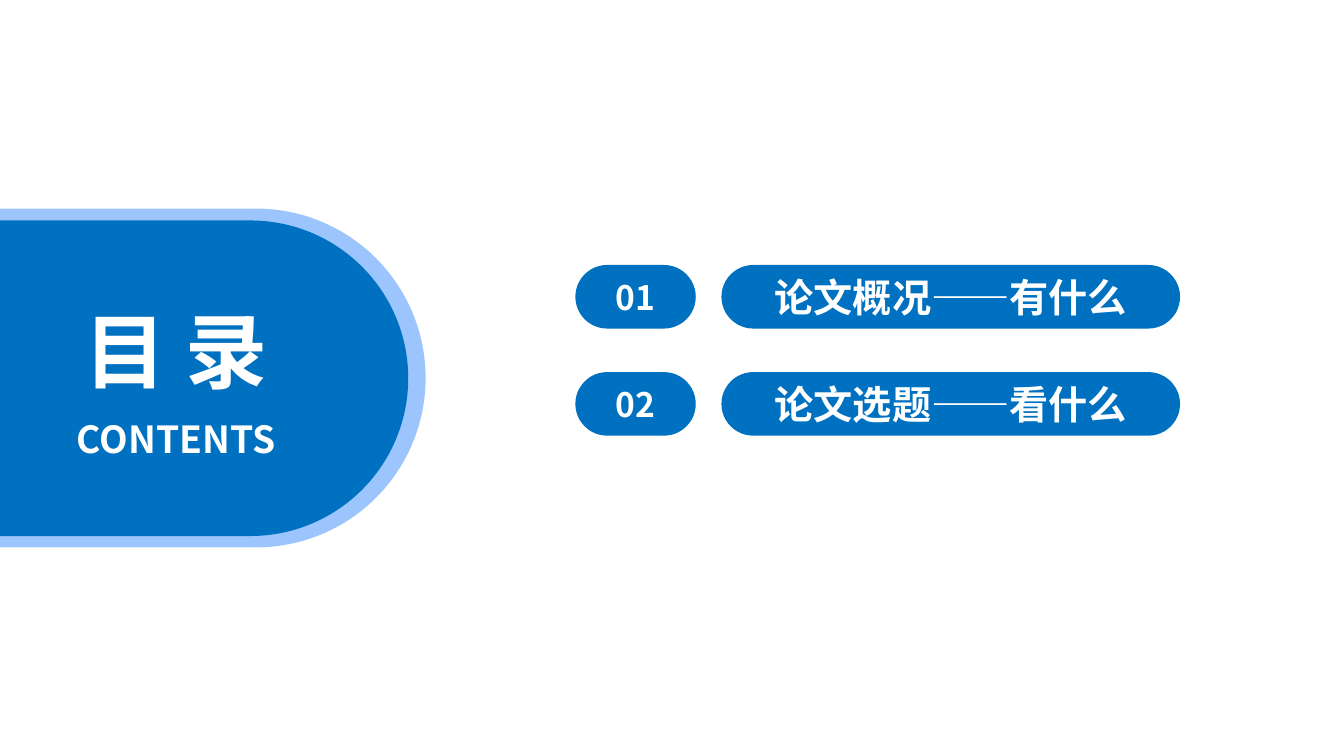
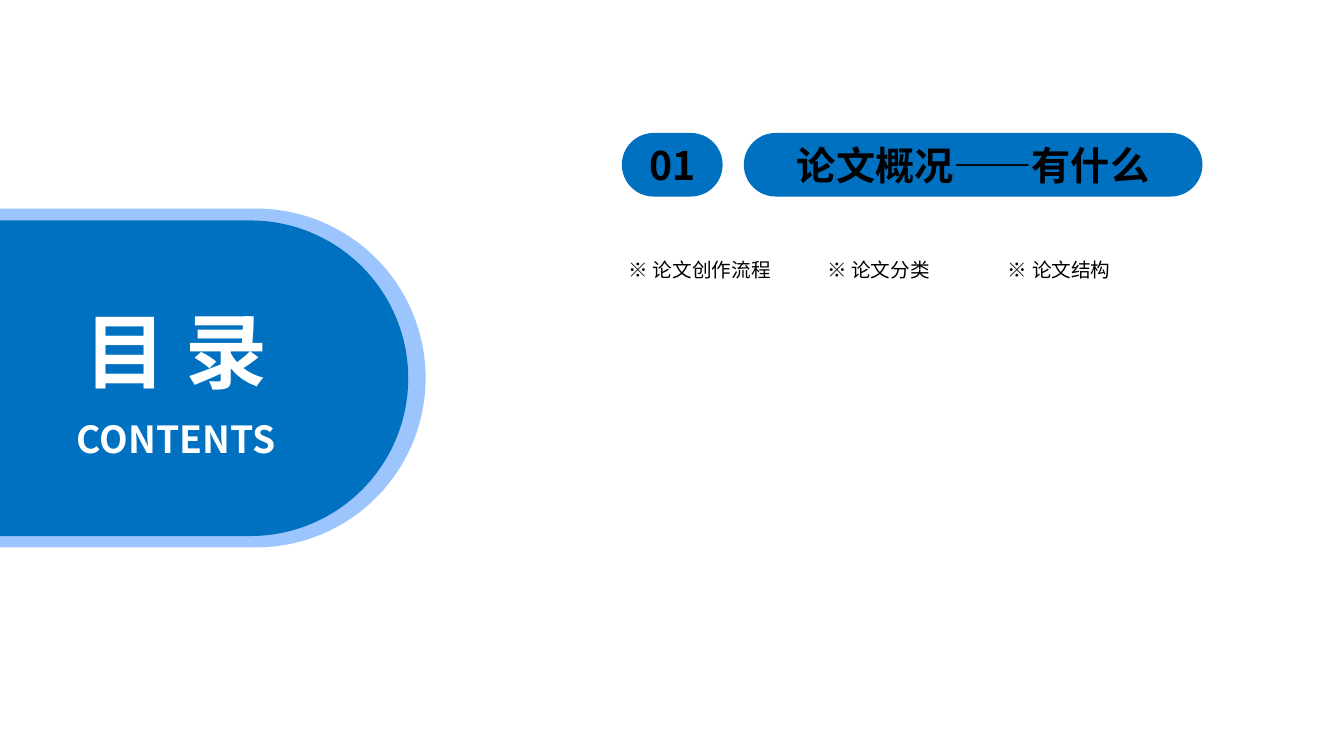
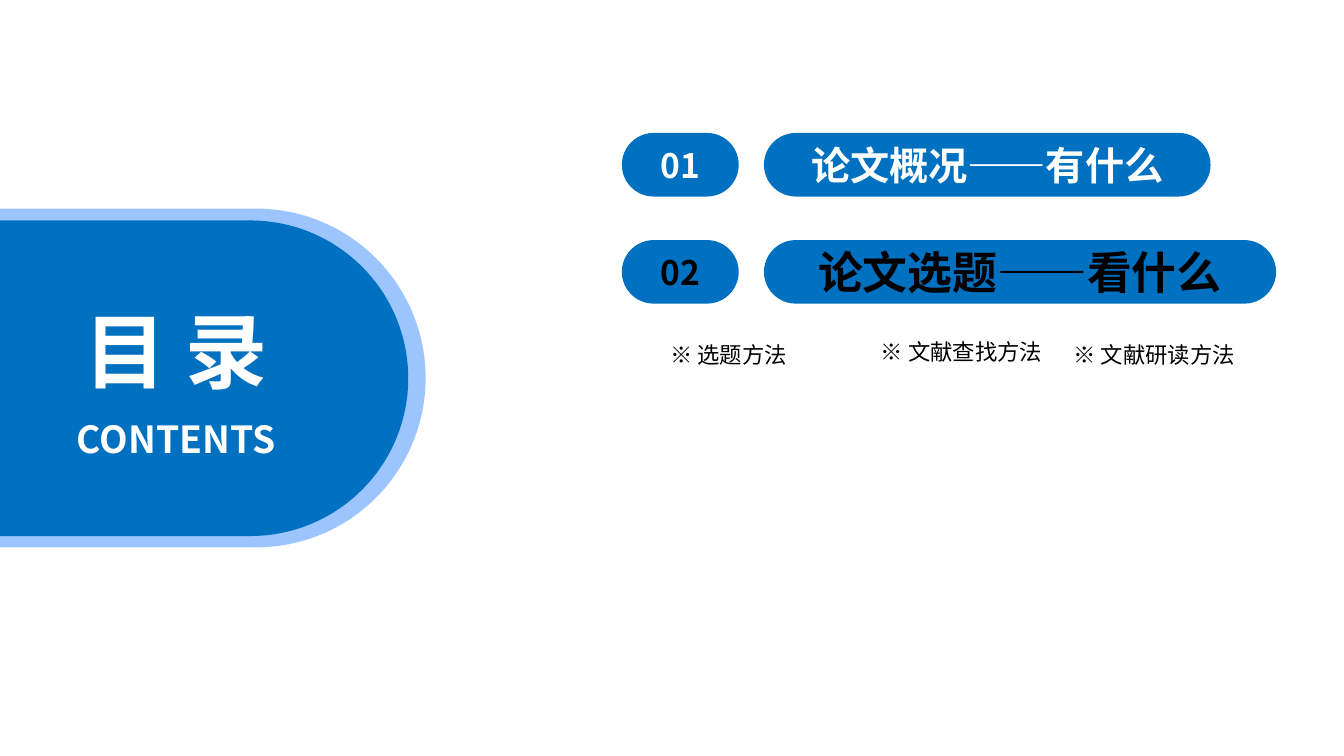
import pptx
import pptx.dml.color
import pptx.enum.shapes
import pptx.enum.text
import pptx.oxml.ns
import pptx.util
from lxml import etree

Pt = pptx.util.Pt
RGBColor = pptx.dml.color.RGBColor
PP_ALIGN = pptx.enum.text.PP_ALIGN
MSO_ANCHOR = pptx.enum.text.MSO_ANCHOR
MSO_AUTO_SIZE = pptx.enum.text.MSO_AUTO_SIZE
qn = pptx.oxml.ns.qn

FONT = "Noto Sans CJK SC"
BLUE = RGBColor(0x00, 0x70, 0xC0)
PALE_BLUE = RGBColor(0x9C, 0xC5, 0xFD)
WHITE = RGBColor(0xFF, 0xFF, 0xFF)
BLACK = RGBColor(0x00, 0x00, 0x00)

PILL_HEIGHT = 45.4
ROW_PITCH = 76.5
TOPIC_INSETS = (5, 2.2)

OVERVIEW = "论文概况——有什么"
CHOICE = "论文选题——看什么"

# x, width: the number and heading columns; top: the first row
# rows: heading, heading width, number size, heading size, is current section
# topics: text, left, top, width
AGENDAS = [
    {
        "number": (411, 86), "heading_x": 515.3, "top": 189.3,
        "rows": [(OVERVIEW, 327.6, 24, 28, False),
                 (CHOICE, 327.6, 24, 28, False)],
        "topic_size": 14, "topics": [],
    },
    {
        "number": (444.2, 72), "heading_x": 531.3, "top": 95,
        "rows": [(OVERVIEW, 327.6, 28, 28, True)],
        "topic_size": 14,
        "topics": [("※ 论文创作流程", 444.2, 182.2, 121.7),
                   ("※ 论文分类", 586, 182.2, 129.6),
                   ("※ 论文结构", 715, 182.2, 135.4)],
    },
    {
        "number": (444.2, 83.5), "heading_x": 545.7, "top": 95,
        "rows": [(OVERVIEW, 319, 24, 28, False),
                 (CHOICE, 365.8, 24, 32, True)],
        "topic_size": 16,
        "topics": [("※ 选题方法", 473.8, 241.2, 128.9),
                   ("※ 文献查找方法", 624.2, 239, 137.5),
                   ("※ 文献研读方法", 761.8, 241.2, 144)],
    },
]


def write(tf, text, size, color, bold=True, align=PP_ALIGN.CENTER):
    p = tf.paragraphs[0]
    p.alignment = align
    r = p.add_run()
    r.text = text
    r.font.size = Pt(size)
    r.font.bold = bold
    r.font.name = FONT
    r.font.color.rgb = color
    ea = etree.Element(qn("a:ea"), typeface=FONT)
    r._r.rPr.find(qn("a:latin")).addnext(ea)
    return r


def outline(r, color, width):
    """Give the letters of a run a thin contour."""
    ln = etree.Element(qn("a:ln"), w=str(int(Pt(width))))
    fill = etree.SubElement(ln, qn("a:solidFill"))
    etree.SubElement(fill, qn("a:srgbClr"), val=str(color))
    r._r.rPr.insert(0, ln)


def add_pill(s, x, y, w, h, color):
    sp = s.shapes.add_shape(pptx.enum.shapes.MSO_SHAPE.ROUNDED_RECTANGLE,
                            Pt(x), Pt(y), Pt(w), Pt(h))
    sp.adjustments[0] = 0.5
    sp.shadow.inherit = False
    sp.fill.solid()
    sp.fill.fore_color.rgb = color
    sp.line.fill.background()
    return sp


def add_label(s, x, y, w, text, size, current):
    """Add a blue pill with text; the current section is set in black."""
    tf = add_pill(s, x, y, w, PILL_HEIGHT, BLUE).text_frame
    tf.vertical_anchor = MSO_ANCHOR.MIDDLE
    r = write(tf, text, size, BLACK if current else WHITE)
    if current:
        outline(r, WHITE, 0.75)


def fit_text(sp, wrap):
    tf = sp.text_frame
    tf.word_wrap = wrap
    tf.auto_size = MSO_AUTO_SIZE.SHAPE_TO_FIT_TEXT
    tf.vertical_anchor = MSO_ANCHOR.TOP
    return tf


def add_contents_panel(s):
    add_pill(s, -141, 149, 445, 242, PALE_BLUE)
    add_pill(s, -122.4, 157.5, 414, 225.4, BLUE)
    sp = s.shapes.add_textbox(Pt(44.6), Pt(293.8), Pt(162.7), Pt(39.6))
    write(fit_text(sp, False), "CONTENTS", 26.6, WHITE)
    title = s.shapes.title
    title.left, title.top = Pt(50.4), Pt(211)
    title.width, title.height = Pt(150.5), Pt(78.5)
    write(fit_text(title, False), "目 录", 58.6, WHITE)
    s.shapes._spTree.append(title._element)  # bring in front of the panel


def add_topic(s, text, x, y, w, size):
    sp = s.shapes.add_textbox(Pt(x), Pt(y), Pt(w), Pt(size * 1.5))
    tf = fit_text(sp, True)
    side, edge = TOPIC_INSETS
    tf.margin_left = tf.margin_right = Pt(side)
    tf.margin_top = tf.margin_bottom = Pt(edge)
    write(tf, text, size, BLACK, bold=False, align=PP_ALIGN.LEFT)


def add_agenda(prs, agenda):
    s = prs.slides.add_slide(prs.slide_layouts[5])
    add_contents_panel(s)
    number_x, number_w = agenda["number"]
    for i, (heading, w, number_size, size, current) in enumerate(agenda["rows"]):
        y = agenda["top"] + i * ROW_PITCH
        add_label(s, number_x, y, number_w, f"{i + 1:02}", number_size, current)
        add_label(s, agenda["heading_x"], y, w, heading, size, current)
    for topic in agenda["topics"]:
        add_topic(s, *topic, agenda["topic_size"])


def main():
    prs = pptx.Presentation()
    prs.slide_width, prs.slide_height = Pt(960), Pt(540)
    for agenda in AGENDAS:
        add_agenda(prs, agenda)
    prs.save("out.pptx")


if __name__ == "__main__":
    main()
